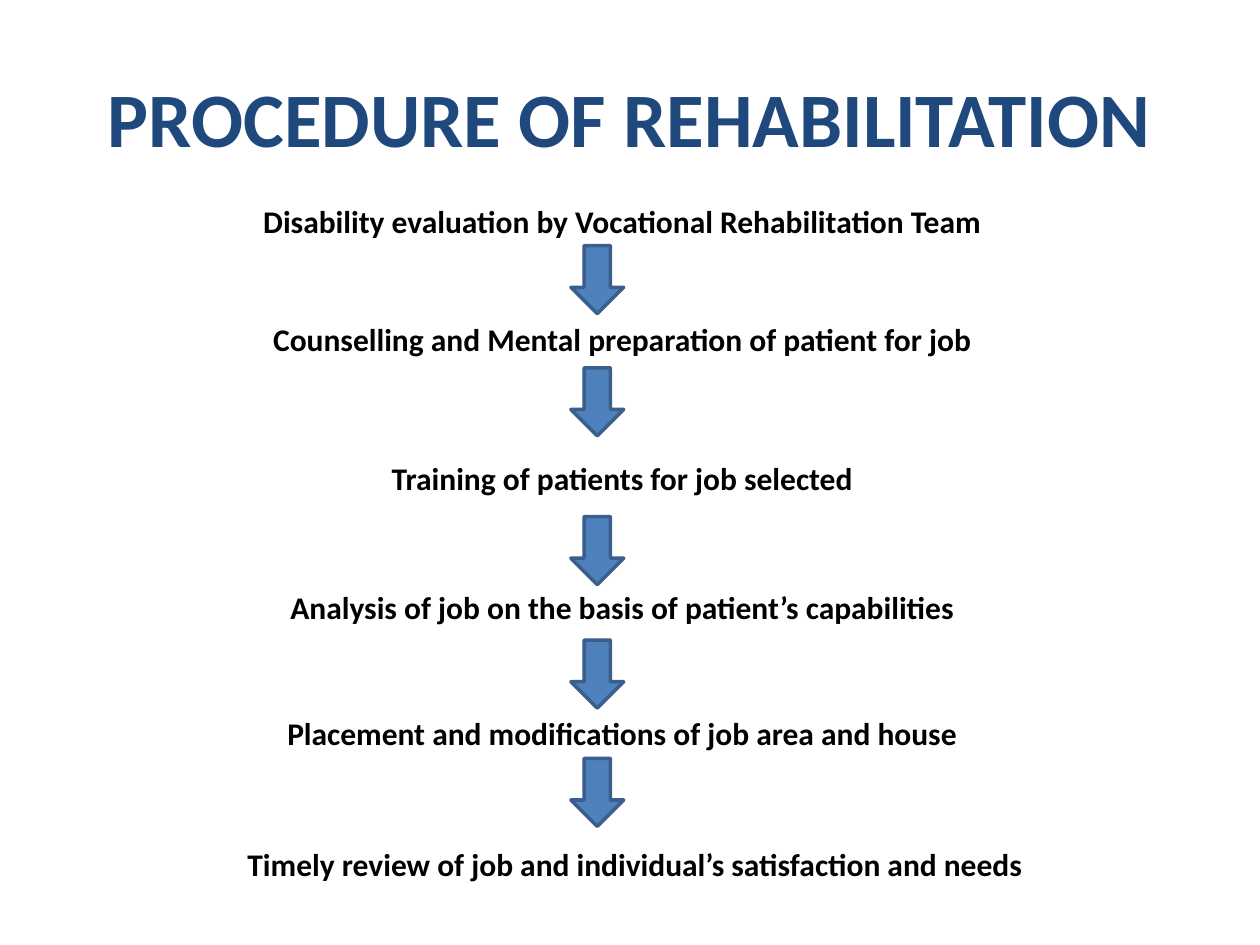
import pptx
import pptx.util
import pptx.dml.color
import pptx.enum.shapes
import pptx.enum.text

Pt = pptx.util.Pt
RGB = pptx.dml.color.RGBColor
Align = pptx.enum.text.PP_ALIGN
Anchor = pptx.enum.text.MSO_ANCHOR
Fit = pptx.enum.text.MSO_AUTO_SIZE
DOWN = pptx.enum.shapes.MSO_SHAPE.DOWN_ARROW

NAVY = RGB(0x1F, 0x49, 0x7D)
BLUE = RGB(0x4F, 0x81, 0xBD)
EDGE = RGB(0x3A, 0x5F, 0x8C)
BLACK = RGB(0, 0, 0)

TITLE = "PROCEDURE OF REHABILITATION"
NARROW = (137.5, 436.3)
WIDE = (99.4, 527)
STEPS = [
    ("Disability evaluation by Vocational Rehabilitation Team", 111.6, NARROW),
    ("Counselling and Mental preparation of patient for job", 179.3, NARROW),
    ("Training of patients for job selected", 258.5, NARROW),
    ("Analysis of job on the basis of patient’s capabilities", 332.6, NARROW),
    ("Placement and modifications of job area and house", 404.6, NARROW),
    ("Timely review of job and individual’s satisfaction and needs", 479.5, WIDE),
]
ARROWS = [140.4, 210.2, 295.2, 365.8, 433.4]


def write(frame, text, size, color):
    para = frame.paragraphs[0]
    para.alignment = Align.CENTER
    run = para.add_run()
    run.text = text
    font = run.font
    font.name, font.size, font.bold = "Calibri", Pt(size), True
    font.color.rgb = color


def add_step(slide, text, top, span):
    left, width = span
    box = slide.shapes.add_textbox(Pt(left), Pt(top), Pt(width), Pt(29))
    frame = box.text_frame
    frame.word_wrap = True
    frame.auto_size = Fit.SHAPE_TO_FIT_TEXT
    write(frame, text, 18, BLACK)


def add_arrow(slide, top):
    arrow = slide.shapes.add_shape(DOWN, Pt(326.2), Pt(top), Pt(30.2), Pt(38.9))
    arrow.shadow.inherit = False
    arrow.fill.solid()
    arrow.fill.fore_color.rgb = BLUE
    arrow.line.color.rgb = EDGE
    arrow.line.width = Pt(2)


def main():
    deck = pptx.Presentation()
    deck.slide_width, deck.slide_height = Pt(720), Pt(540)
    slide = deck.slides.add_slide(deck.slide_layouts[5])

    title = slide.shapes.title
    title.left, title.top = Pt(36), Pt(21.6)
    title.width, title.height = Pt(648), Pt(90)
    title.text_frame.vertical_anchor = Anchor.MIDDLE
    write(title.text_frame, TITLE, 44, NAVY)

    for text, top, span in STEPS:
        add_step(slide, text, top, span)
    for top in ARROWS:
        add_arrow(slide, top)
    deck.save("out.pptx")


if __name__ == "__main__":
    main()
